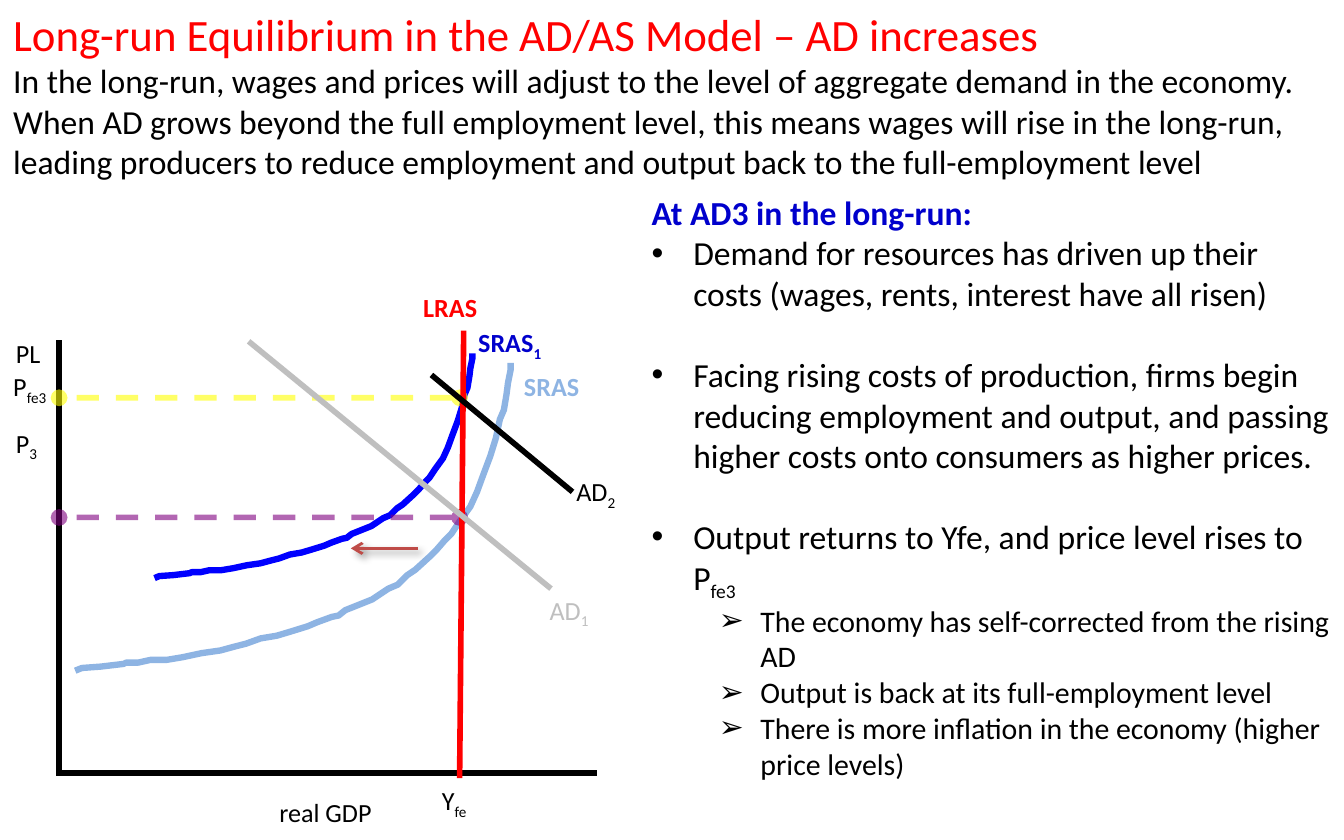
import pptx
import pptx.util
import pptx.dml.color
import pptx.enum.dml
import pptx.enum.shapes
import pptx.enum.text
import pptx.oxml
import pptx.oxml.ns

Inches = pptx.util.Inches
Pt = pptx.util.Pt

BLACK, RED, BLUE, NAVY = "000000", "FF0000", "0000FF", "0000CC"
SKY, GREY, PURPLE, YELLOW, BRICK = "8EB4E3", "BFBFBF", "800080", "FFFF00", "BF4C48"

# Supply curve, in inches from the top left corner of its frame
CURVE = [
    (0, 2.29), (0.05, 2.27), (0.19, 2.26), (0.36, 2.24), (0.38, 2.23),
    (0.47, 2.23), (0.56, 2.21), (0.68, 2.21), (0.8, 2.19), (0.94, 2.16),
    (1.08, 2.14), (1.19, 2.11), (1.27, 2.09), (1.38, 2.05), (1.5, 2.03),
    (1.6, 2), (1.73, 1.96), (1.8, 1.93), (1.91, 1.89), (1.96, 1.88),
    (2.01, 1.84), (2.11, 1.8), (2.21, 1.76), (2.33, 1.68), (2.4, 1.65),
    (2.47, 1.58), (2.53, 1.54), (2.64, 1.44), (2.69, 1.39), (2.75, 1.32),
    (2.8, 1.27), (2.86, 1.18), (2.94, 1.07), (2.99, 0.96), (3.03, 0.85),
    (3.09, 0.69), (3.13, 0.56), (3.16, 0.42), (3.19, 0.35), (3.21, 0.23),
    (3.22, 0.15), (3.24, 0.05), (3.24, 0),
]


def color(code):
    return pptx.dml.color.RGBColor.from_string(code)


def node(tag, inner="", **attrs):
    """Make one DrawingML element."""
    text = " ".join(f'{key}="{val}"' for key, val in attrs.items())
    space = pptx.oxml.ns.nsdecls("a")
    return pptx.oxml.parse_xml(f"<a:{tag} {space} {text}>{inner}</a:{tag}>")


class Board:
    font = "Calibri"

    def __init__(self, slide):
        self.slide = slide

    def words(self, para, text, size, tint=BLACK, bold=False):
        """Add text; what follows an underscore is a subscript."""
        for idx, part in enumerate(text.split("_")):
            run = para.add_run()
            run.text = part
            style = {"name": self.font, "size": Pt(size), "bold": bold}
            for key, val in style.items():
                setattr(run.font, key, val)
            run.font.color.rgb = color(tint)
            if idx:
                run._r.get_or_add_rPr().set("baseline", "-25000")

    def box(self, left, top, width, height, lines):
        """Add a text box; a line is (text, size, tint, bold, mark, left indent, space before)."""
        shape = self.slide.shapes.add_textbox(*map(Inches, (left, top, width, height)))
        frame = shape.text_frame
        frame.word_wrap = True
        frame.auto_size = pptx.enum.text.MSO_AUTO_SIZE.SHAPE_TO_FIT_TEXT
        for idx, (text, size, tint, bold, mark, indent, gap) in enumerate(lines):
            para = frame.add_paragraph() if idx else frame.paragraphs[0]
            self.words(para, text, size, tint, bold)
            if gap:
                para.space_before = Pt(gap)
            if mark:
                props = para._p.get_or_add_pPr()
                props.set("marL", str(Inches(indent)))
                props.set("indent", str(Inches(-0.31)))
                props.append(node("buFont", typeface="Arial"))
                props.append(node("buChar", char=mark))

    def label(self, left, top, width, text, tint=BLACK, bold=False):
        self.box(left, top, width, 0.34, [(text, 14, tint, bold, "", 0, 0)])

    def line(self, start, end, tint=BLACK, width=3, head="", tail="",
             dashed=False, shade=False):
        kind = pptx.enum.shapes.MSO_CONNECTOR.STRAIGHT
        link = self.slide.shapes.add_connector(kind, *map(Inches, start + end))
        link.line.width = Pt(width)
        link.line.color.rgb = color(tint)
        pen = link.line._get_or_add_ln()
        if dashed:
            link.line.dash_style = pptx.enum.dml.MSO_LINE.DASH
            pen.find(".//" + pptx.oxml.ns.qn("a:srgbClr")).append(node("alpha", val=60000))
        for tag, tip in (("headEnd", head), ("tailEnd", tail)):
            if tip:
                pen.append(node(tag, type=tip))
        glow = ""
        if shade:
            glow = (f'<a:outerShdw blurRad="{Pt(4)}" dist="{Pt(3)}" dir="2700000">'
                    '<a:srgbClr val="000000"><a:alpha val="40000"/></a:srgbClr></a:outerShdw>')
        link._element.spPr.append(node("effectLst", glow))

    def curve(self, left, top, scale, tint):
        spots = [(Inches(left + x * scale), Inches(top + y * scale)) for x, y in CURVE]
        pen = self.slide.shapes.build_freeform(*spots[0])
        pen.add_line_segments(spots[1:], close=False)
        shape = pen.convert_to_shape()
        shape.shadow.inherit = False
        shape.fill.background()
        shape.line.color.rgb = color(tint)
        shape.line.width = Pt(3.39)


def main():
    deck = pptx.Presentation()
    deck.slide_width, deck.slide_height = Inches(10), Inches(6.25)
    board = Board(deck.slides.add_slide(deck.slide_layouts[6]))

    board.box(0, 0, 10, 1.41, [
        ("Long-run Equilibrium in the AD/AS Model – AD increases", 24, RED, False, "", 0, 0),
        ("In the long-run, wages and prices will adjust to the level of aggregate demand "
         "in the economy. When AD grows beyond the full employment level, this means wages "
         "will rise in the long-run, leading producers to reduce employment and output back "
         "to the full-employment level", 18, BLACK, False, "", 0, 0),
    ])

    points = [
        "Demand for resources has driven up their costs (wages, rents, interest have all risen)",
        "Facing rising costs of production, firms begin reducing employment and output, "
        "and passing higher costs onto consumers as higher prices.",
        "Output returns to Yfe, and price level rises to P_fe3",
    ]
    results = [
        "The economy has self-corrected from the rising AD",
        "Output is back at its full-employment level",
        "There is more inflation in the economy (higher price levels)",
    ]
    lines = [("At AD3 in the long-run:", 18, NAVY, True, "", 0, 0)]
    lines += [(text, 18, BLACK, False, "•", 0.31, 22 if idx else 0)
              for idx, text in enumerate(points)]
    lines += [(text, 16, BLACK, False, "➢", 0.81, 0) for text in results]
    board.box(4.75, 1.38, 5.25, 4.78, lines)

    # Axes
    axis, full = 0.44, 3.42
    board.line((axis, 2.53), (axis, 5.74))
    board.line((0.42, 5.75), (4.44, 5.75))
    board.label(0.02, 2.46, 0.74, "PL")
    board.label(1.98, 5.88, 1.23, "real GDP")

    # Short-run supply, before and after the shift
    board.curve(0.56, 2.7, 1, SKY)
    board.label(3.8, 2.71, 0.81, "SRAS", SKY, True)
    board.curve(1.15, 2.63, 0.73, BLUE)
    board.label(3.46, 2.38, 0.97, "SRAS_1", NAVY, True)

    # Price levels
    for level, tint in ((3.85, PURPLE), (2.96, YELLOW)):
        board.line((full, level), (axis, level), tint, head="oval", tail="oval", dashed=True)
    board.label(0, 2.71, 0.52, "P_fe3")
    board.label(0.02, 3.13, 0.52, "P_3")

    # Long-run supply
    board.line((full, 5.79), (3.45, 2.46), RED)
    board.label(3.05, 2.12, 0.81, "LRAS", RED, True)
    board.label(3.19, 5.79, 0.54, "Y_fe")

    # Demand
    board.line((1.85, 2.54), (4.1, 4.38), GREY)
    board.label(3.99, 4.37, 0.81, "AD_1", GREY)
    board.line((3.21, 2.79), (4.26, 3.66))
    board.label(4.19, 3.49, 0.81, "AD_2")

    board.line((3.11, 4.08), (2.61, 4.08), BRICK, 1.5, tail="arrow", shade=True)
    deck.save("out.pptx")


if __name__ == "__main__":
    main()
